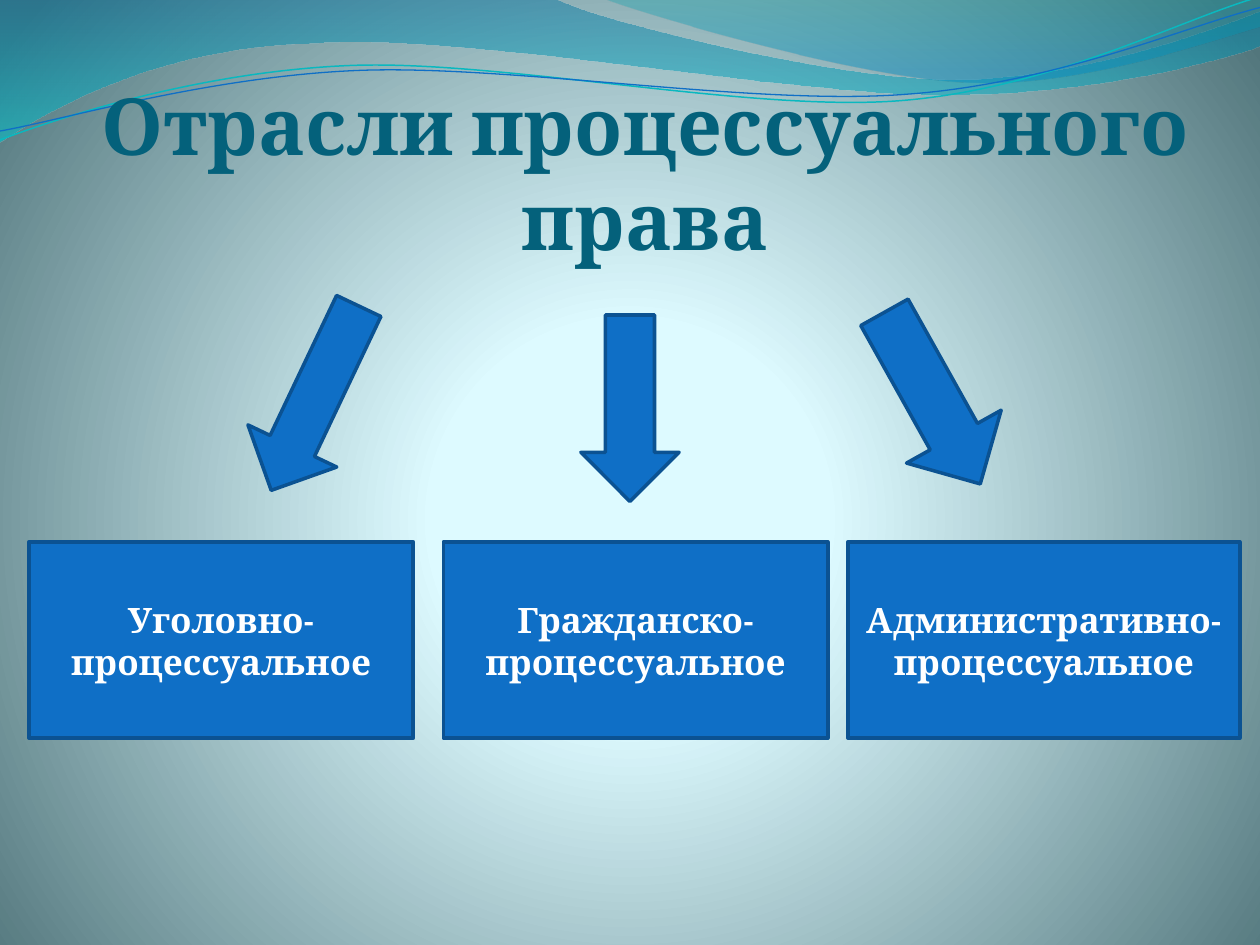
from itertools import islice
from math import cos, radians, sin

from lxml import etree
from pptx import Presentation
from pptx.dml.color import RGBColor
from pptx.enum.shapes import MSO_SHAPE
from pptx.enum.text import MSO_ANCHOR, PP_ALIGN
from pptx.oxml.ns import qn
from pptx.util import Inches, Pt

DOWN_ARROW = MSO_SHAPE.DOWN_ARROW
RECT = MSO_SHAPE.RECTANGLE
CENTER = PP_ALIGN.CENTER
MIDDLE, BOTTOM = MSO_ANCHOR.MIDDLE, MSO_ANCHOR.BOTTOM
COLS, ROWS = 10, 7.5
TILT = 357.3

COLORS = {
    "glow": "DEFBFF", "pale": "DDFAFF", "edge": "52767C",
    "deep": "0074A1", "aqua": "00C6CF", "sea": "00A1A9", "sky": "008BBF",
    "teal": "0AB8BF", "blue": "0F6FC6", "border": "0B5292",
    "title": "04617B", "white": "FFFFFF",
}


def rgb(name):
    return RGBColor.from_string(COLORS[name])


def write(sp, text, size, color, anchor, font="Cambria", bold=True):
    tf = sp.text_frame
    tf.word_wrap = True
    tf.vertical_anchor = anchor
    p = tf.paragraphs[0]
    p.alignment = CENTER
    r = p.add_run()
    r.text = text
    r.font.name, r.font.size, r.font.bold = font, Pt(size), bold
    r.font.color.rgb = rgb(color)
    return tf


def pairs(step):
    return list(zip(step[::2], step[1::2]))


def turn(step, pivot, angle):
    cx, cy = pivot
    c, s = cos(radians(angle)), sin(radians(angle))
    return [v for px, py in pairs(step)
            for v in (cx + (px - cx) * c - (py - cy) * s,
                      cy + (px - cx) * s + (py - cy) * c)]


def bend(sp, steps):
    outline = next(sp.element.iter(qn("a:path")))
    lines = iter(outline.findall(qn("a:lnTo")))
    for step in steps:
        group = list(islice(lines, len(step) // 2))
        if len(group) == 3:
            curve = outline.makeelement(qn("a:cubicBezTo"))
            group[0].addprevious(curve)
            for line in group:
                curve.append(line[0])
                outline.remove(line)


class Deck:
    def __init__(self):
        self.prs = Presentation()
        self.prs.slide_width, self.prs.slide_height = Inches(10), Inches(7.5)
        self.slide = self.prs.slides.add_slide(self.prs.slide_layouts[6])
        self.shapes = self.slide.shapes

    def x(self, cols):
        return round(self.prs.slide_width * cols / COLS)

    def y(self, rows):
        return round(self.prs.slide_height * rows / ROWS)

    def box(self, left, top, width, height):
        return self.x(left), self.y(top), self.x(width), self.y(height)

    def gradient(self, fill, element, stops, center=None):
        fill.gradient()
        grad = next(element.iter(qn("a:gradFill")))
        for child in list(grad):
            grad.remove(child)
        gs_list = etree.SubElement(grad, qn("a:gsLst"))
        for pos, color, opacity in stops:
            gs = etree.SubElement(gs_list, qn("a:gs"), pos=str(pos * 1000))
            clr = etree.SubElement(gs, qn("a:srgbClr"), val=COLORS[color])
            if opacity < 100:
                etree.SubElement(clr, qn("a:alpha"), val=str(opacity * 1000))
        if center:
            circle = etree.SubElement(grad, qn("a:path"), {"path": "circle"})
            etree.SubElement(circle, qn("a:fillToRect"),
                             {side: str(v * 1000) for side, v in zip("ltrb", center)})
        else:
            etree.SubElement(grad, qn("a:lin"), ang="5400000", scaled="1")

    def background(self, stops, center):
        self.gradient(self.slide.background.fill, self.slide.element, stops, center)

    def outline(self, shapes, start, steps, close):
        points = [(self.x(px), self.y(py))
                  for step in (start, *steps) for px, py in pairs(step)]
        builder = shapes.build_freeform(*points[0])
        builder.add_line_segments(points[1:], close=close)
        sp = builder.convert_to_shape()
        bend(sp, steps)
        sp.shadow.inherit = False
        return sp

    def wave(self, start, steps, stops):
        sp = self.outline(self.shapes, start, steps, True)
        self.gradient(sp.fill, sp.element, stops)
        sp.line.fill.background()

    def ribbon(self, group, pivot, start, curves, color, width):
        start, *curves = [turn(step, pivot, -TILT) for step in (start, *curves)]
        sp = self.outline(group.shapes, start, curves, False)
        sp.rotation = TILT
        sp.fill.background()
        sp.line.color.rgb, sp.line.width = rgb(color), Pt(width)

    def title(self, text, *place):
        sp = self.shapes.add_textbox(*self.box(*place))
        tf = write(sp, text, 45, "title", BOTTOM)
        tf.margin_left = tf.margin_right = tf.margin_bottom = 0

    def block(self, kind, *place, angle=0):
        sp = self.shapes.add_shape(kind, *self.box(*place))
        sp.rotation = angle
        sp.shadow.inherit = False
        sp.fill.solid()
        sp.fill.fore_color.rgb = rgb("blue")
        sp.line.color.rgb, sp.line.width = rgb("border"), Pt(2)
        return sp

    def arrow(self, left, top, width, height, angle):
        self.block(DOWN_ARROW, left, top, width, height, angle=angle)

    def branch(self, text, left, width):
        write(self.block(RECT, left, 4.3, width, 1.56), text, 20, "white", MIDDLE)


def main():
    deck = Deck()
    deck.background([(0, "glow", 100), (25, "pale", 100), (100, "edge", 100)],
                    (10, 110, 10, 100))
    deck.wave((0, 0), [(4.4, -0.01), (4.76, 0.17, 6.64, 0.63, 7.58, 0.63),
                       (8.53, 0.63, 9.58, 0.26, 10, 0.09), (10.01, 0.36),
                       (9.83, 0.44, 8.7, 0.76, 7.46, 0.75),
                       (6.22, 0.75, 3.82, 0.28, 2.57, 0.34),
                       (1.29, 0.36, 0.46, 0.83, -0.01, 1.13)],
              [(0, "deep", 45), (100, "aqua", 55)])
    deck.wave((4.79, -0.01), [(5.09, 0.11, 6.82, 0.62, 7.69, 0.65),
                              (8.56, 0.69, 9.61, 0.32, 10, 0.21), (10, 0)],
              [(0, "sea", 30), (80, "sky", 45)])
    ribbons = deck.shapes.add_group_shape()
    deck.ribbon(ribbons, (4.99, 0.58), (0, 1.11),
                [(0.48, 0.93, 1.58, 0.57, 2.77, 0.52),
                 (3.95, 0.47, 5.93, 0.89, 7.13, 0.8),
                 (8.33, 0.71, 9.38, 0.15, 9.98, -0.02)], "teal", 0.85)
    deck.ribbon(ribbons, (5, 0.59), (0, 1.04),
                [(0.47, 0.96, 1.64, 0.61, 2.83, 0.56),
                 (4.03, 0.51, 5.97, 0.84, 7.17, 0.75),
                 (8.36, 0.67, 9.41, 0.21, 10, 0.06)], "blue", 0.75)
    deck.title("Отрасли процессуального права", 0.62, 0.86, 9, 1.25)
    for arrow in ((2.11, 2.35, 0.78, 1.62, 25.4),
                  (4.61, 2.5, 0.78, 1.48, 0),
                  (6.97, 2.38, 0.86, 1.56, 330.8)):
        deck.arrow(*arrow)
    for name, left, width in (("Уголовно", 0.23, 3.05),
                              ("Гражданско", 3.52, 3.05),
                              ("Административно", 6.73, 3.11)):
        deck.branch(f"{name}-процессуальное", left, width)
    deck.prs.save("out.pptx")


if __name__ == "__main__":
    main()
